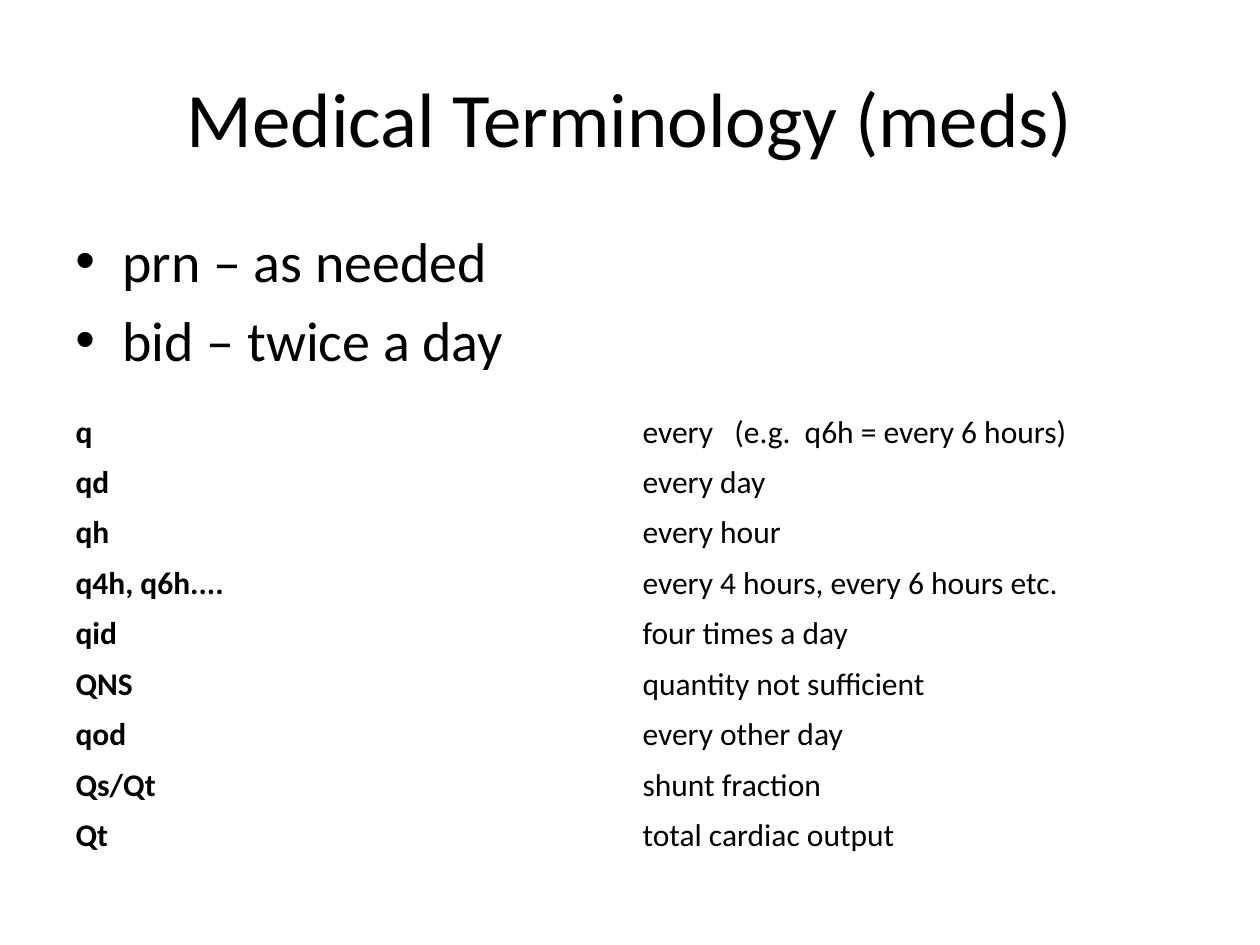
from lxml.etree import SubElement
from pptx import Presentation
from pptx.dml.color import RGBColor
from pptx.enum.text import MSO_ANCHOR, PP_ALIGN
from pptx.oxml.ns import qn
from pptx.util import Cm, Pt

COLORS = {"text": "000000", "background": "FFFFFF"}
FONT = "Calibri"
BULLETS = ["prn – as needed", "bid – twice a day"]
TERMS = [
    ("q", "every   (e.g.  q6h = every 6 hours)"),
    ("qd", "every day"),
    ("qh", "every hour"),
    ("q4h, q6h....", "every 4 hours, every 6 hours etc."),
    ("qid", "four times a day"),
    ("QNS", "quantity not sufficient"),
    ("qod", "every other day"),
    ("Qs/Qt", "shunt fraction"),
    ("Qt", "total cardiac output"),
]


def write_text(paragraph, text, size, bold=False, align=PP_ALIGN.LEFT, space_before=0):
    paragraph.alignment = align
    paragraph.space_before = Pt(space_before)
    run = paragraph.add_run()
    run.text = text
    run.font.name = FONT
    run.font.size = Pt(size)
    run.font.bold = bold
    run.font.color.rgb = RGBColor.from_string(COLORS["text"])


def add_bullet(paragraph, indent):
    properties = paragraph._p.get_or_add_pPr()
    properties.set("marL", str(indent))
    properties.set("indent", str(-indent))
    SubElement(properties, qn("a:buFont")).set("typeface", "Arial")
    SubElement(properties, qn("a:buChar")).set("char", "•")


def place_title(slide, text, left, top, width, height):
    title = slide.shapes.title
    title.left, title.top, title.width, title.height = left, top, width, height
    title.text_frame.vertical_anchor = MSO_ANCHOR.MIDDLE
    write_text(title.text_frame.paragraphs[0], text, size=44, align=PP_ALIGN.CENTER)


def place_bullets(slide, lines, left, top, width, height):
    frame = slide.shapes.add_textbox(left, top, width, height).text_frame
    frame.word_wrap = True
    for index, line in enumerate(lines):
        paragraph = frame.add_paragraph() if index else frame.paragraphs[0]
        write_text(paragraph, line, size=32, space_before=6.4)
        add_bullet(paragraph, Cm(0.95))


def place_terms(slide, terms, left, top, width, height):
    table = slide.shapes.add_table(len(terms), 2, left, top, width, height).table
    table.first_row = False
    table.horz_banding = False
    for row, term in enumerate(terms):
        for column, text in enumerate(term):
            cell = table.cell(row, column)
            cell.fill.background()
            cell.vertical_anchor = MSO_ANCHOR.MIDDLE
            write_text(cell.text_frame.paragraphs[0], text, size=18, bold=column == 0)


def main():
    presentation = Presentation()
    presentation.slide_width, presentation.slide_height = Cm(25.4), Cm(19.05)
    slide = presentation.slides.add_slide(presentation.slide_layouts[5])
    slide.background.fill.solid()
    slide.background.fill.fore_color.rgb = RGBColor.from_string(COLORS["background"])
    left, width = Cm(1.27), Cm(22.86)
    place_title(slide, "Medical Terminology (meds)", left, Cm(0.76), width, Cm(3.18))
    place_bullets(slide, BULLETS, left, Cm(4.45), width, Cm(12.57))
    place_terms(slide, TERMS, left, Cm(8.2), width, Cm(9.14))
    presentation.save("out.pptx")


if __name__ == "__main__":
    main()
